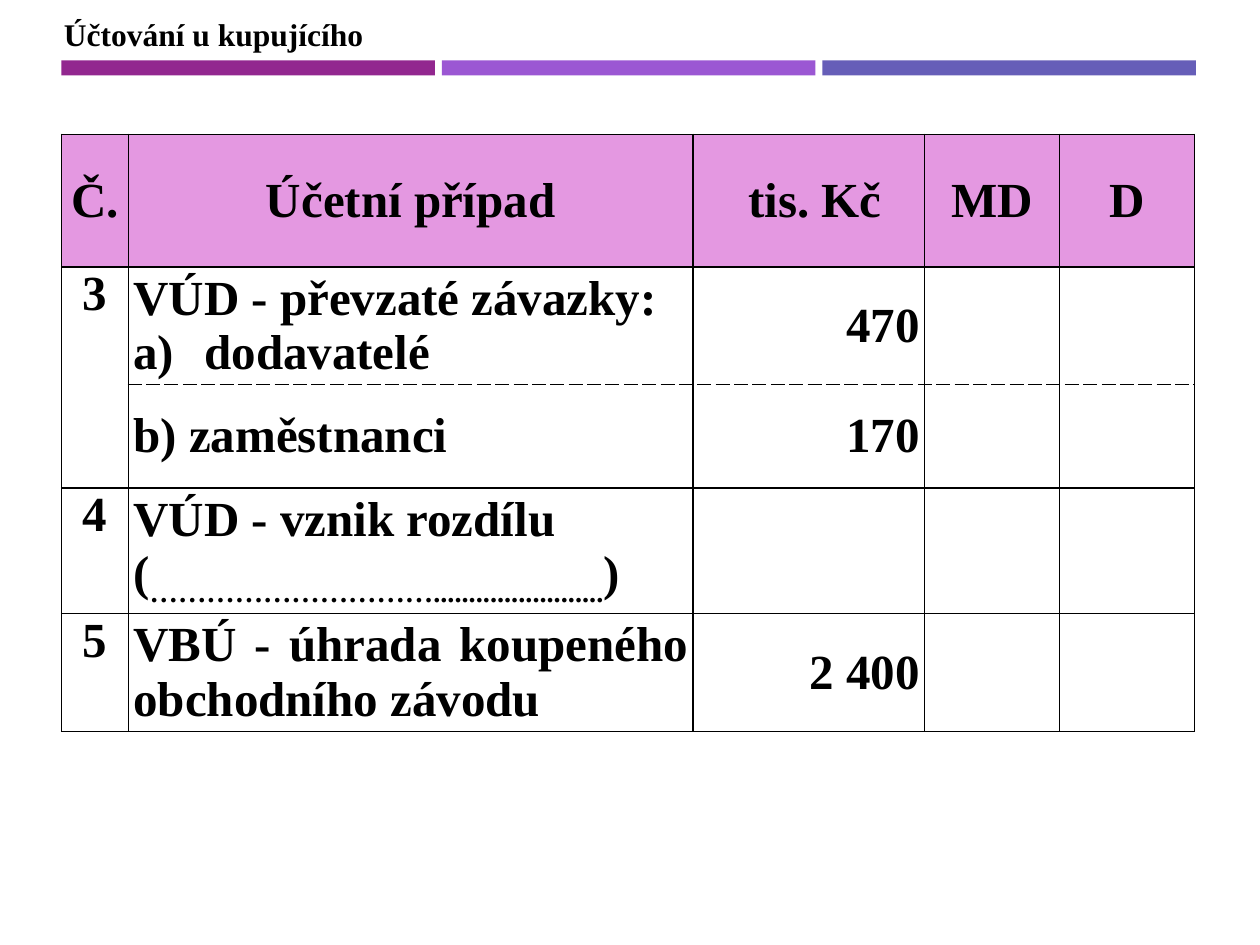
from dataclasses import dataclass

from lxml.etree import SubElement
from pptx import Presentation
from pptx.dml.color import RGBColor
from pptx.enum.shapes import MSO_SHAPE
from pptx.enum.text import MSO_ANCHOR, MSO_AUTO_SIZE, PP_ALIGN
from pptx.oxml.ns import qn
from pptx.util import Cm, Pt


@dataclass(frozen=True)
class Theme:
    font: str = "Times New Roman"
    ink: str = "000000"
    head: str = "E498E1"
    bars: tuple = ("92278F", "9B57D3", "665EB8")
    title: int = 18
    body: int = 28


@dataclass(frozen=True)
class Run:
    text: str
    base: int = 0


@dataclass(frozen=True)
class Para:
    runs: tuple
    listed: bool = False


@dataclass(frozen=True)
class Entry:
    num: str
    paras: tuple
    sum: str = ""


THEME = Theme()
LEFT = 1.24
COLS = (1.35, 11.38, 4.67, 2.72, 2.72)
ROWS = (2.67, 2.08, 2.08, 2.08, 2.08)
HEADS = ("Č.", "Účetní případ", " tis. Kč", "MD", "D")


def plain(text: str, listed: bool = False) -> Para:
    return Para((Run(text),), listed)


ENTRIES = (
    Entry("3", (plain("VÚD - převzaté závazky:"), plain("dodavatelé", True)), "470"),
    Entry("", (plain("b) zaměstnanci"),), "170"),
    Entry("4", (plain("VÚD - vznik rozdílu"),
                Para((Run("("), Run("…………………………........................", -25000), Run(")"))))),
    Entry("5", (plain("VBÚ - úhrada koupeného obchodního závodu"),), "2 400"),
)


def apply(item, form: dict) -> None:
    for name, value in form.items():
        setattr(item, name, value)


def style(font, size: int) -> None:
    apply(font, {"name": THEME.font, "size": Pt(size), "bold": True})
    font.color.rgb = RGBColor.from_string(THEME.ink)


def letter(para) -> None:
    """Number the paragraph a), b), ... with a hanging indent."""
    props = para._p.get_or_add_pPr()
    props.set("marL", str(Cm(1.43)))
    props.set("indent", str(-Cm(1.43)))
    SubElement(props, qn("a:buFont"), typeface="+mj-lt")
    SubElement(props, qn("a:buAutoNum"), type="alphaLcParenR")


def write(frame, paras: tuple, align, size: int) -> None:
    for i, part in enumerate(paras):
        para = frame.add_paragraph() if i else frame.paragraphs[0]
        para.alignment = align
        if part.listed:
            letter(para)
        for piece in part.runs:
            run = para.add_run()
            run.text = piece.text
            style(run.font, size)
            if piece.base:
                run._r.get_or_add_rPr().set("baseline", str(piece.base))


def border(cell, dashed: str) -> None:
    """Rule all four sides, with a dash on the sides named in dashed."""
    props = cell._tc.get_or_add_tcPr()
    for side in "LRTB":
        line = SubElement(props, qn(f"a:ln{side}"), w=str(Pt(1)))
        fill = SubElement(line, qn("a:solidFill"))
        SubElement(fill, qn("a:srgbClr"), val=THEME.ink)
        SubElement(line, qn("a:prstDash"), val="dash" if side in dashed else "solid")


def fill_cell(cell, paras: tuple, align, anchor, head: bool = False, dashed: str = "") -> None:
    border(cell, dashed)
    if head:
        cell.fill.solid()
        cell.fill.fore_color.rgb = RGBColor.from_string(THEME.head)
    else:
        cell.fill.background()
    apply(cell, {"margin_left": Cm(0.1), "margin_right": Cm(0.1), "margin_top": 0,
                 "margin_bottom": 0, "vertical_anchor": anchor})
    if paras:
        write(cell.text_frame, paras, align, THEME.body)


def draw_bars(shapes) -> None:
    width, gap = 7.53, 0.14
    for i, color in enumerate(THEME.bars):
        bar = shapes.add_shape(MSO_SHAPE.RECTANGLE, Cm(LEFT + i * (width + gap)),
                               Cm(1.22), Cm(width), Cm(0.3))
        bar.shadow.inherit = False
        bar.fill.solid()
        bar.fill.fore_color.rgb = RGBColor.from_string(color)
        bar.line.fill.background()


def draw_title(shapes) -> None:
    frame = shapes.add_textbox(Cm(1.04), Cm(0.18), Cm(6.6), Cm(1.02)).text_frame
    apply(frame, {"word_wrap": False, "auto_size": MSO_AUTO_SIZE.SHAPE_TO_FIT_TEXT})
    write(frame, (plain("Účtování u kupujícího"),), PP_ALIGN.LEFT, THEME.title)


def draw_table(shapes) -> None:
    table = shapes.add_table(len(ROWS), len(COLS), Cm(LEFT), Cm(2.71),
                             Cm(sum(COLS)), Cm(sum(ROWS))).table
    apply(table, {"first_row": False, "horz_banding": False})
    for col, width in zip(table.columns, COLS):
        col.width = Cm(width)
    for row, height in zip(table.rows, ROWS):
        row.height = Cm(height)
    table.cell(1, 0).merge(table.cell(2, 0))

    mid = MSO_ANCHOR.MIDDLE
    for c, text in enumerate(HEADS):
        fill_cell(table.cell(0, c), (plain(text),), PP_ALIGN.CENTER, mid, head=True)
    dashes = {1: "B", 2: "T"}
    for r, entry in enumerate(ENTRIES, 1):
        num = (plain(entry.num),) if entry.num else ()
        total = (plain(entry.sum),) if entry.sum else ()
        fill_cell(table.cell(r, 0), num, PP_ALIGN.CENTER, MSO_ANCHOR.TOP)
        rest = ((entry.paras, PP_ALIGN.JUSTIFY), (total, PP_ALIGN.RIGHT), ((), None), ((), None))
        for c, (paras, align) in enumerate(rest, 1):
            fill_cell(table.cell(r, c), paras, align, mid, dashed=dashes.get(r, ""))


def main() -> None:
    deck = Presentation()
    apply(deck, {"slide_width": Cm(25.4), "slide_height": Cm(19.05)})
    shapes = deck.slides.add_slide(deck.slide_layouts[6]).shapes
    draw_bars(shapes)
    draw_title(shapes)
    draw_table(shapes)
    deck.save("out.pptx")


if __name__ == "__main__":
    main()
